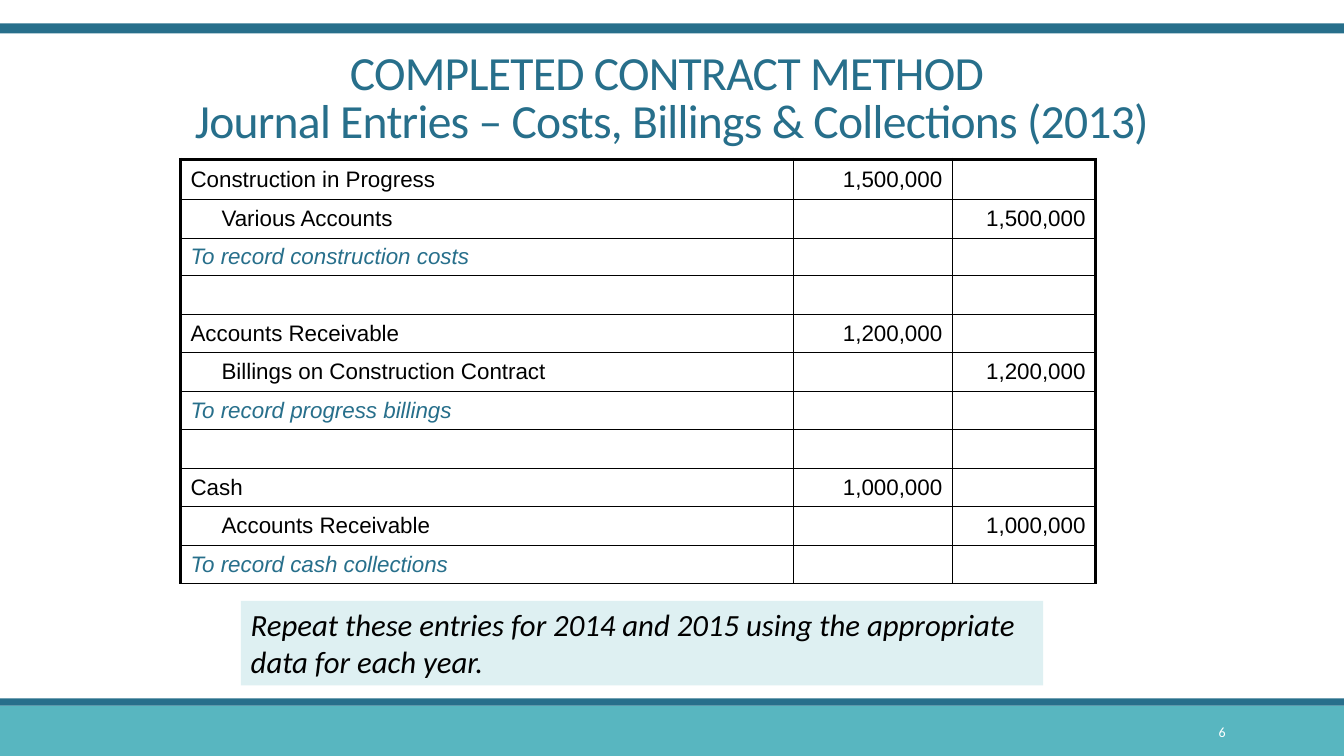
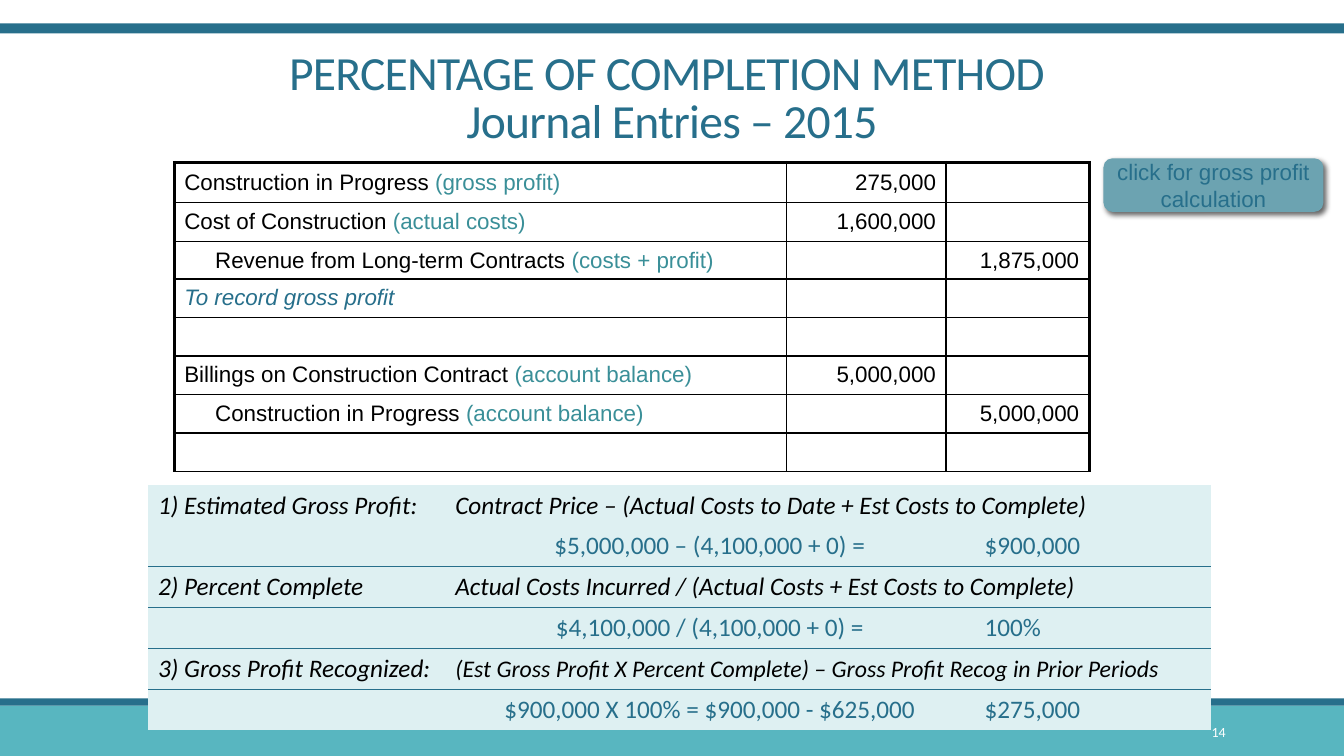
from lxml.etree import SubElement
from pptx import Presentation
from pptx.dml.color import RGBColor
from pptx.enum.shapes import MSO_SHAPE
from pptx.enum.text import MSO_ANCHOR, PP_ALIGN
from pptx.oxml import parse_xml
from pptx.oxml.ns import nsdecls, qn
from pptx.util import Cm, Pt

BLUE, TEAL, PALE = "276F8B", "58B6C0", "DEF0F2"
BLACK, WHITE, HINT, BUTTON = "000000", "FFFFFF", "3A8F98", "6CA3B1"
WIDE = 33.87
NO_STYLE = "{2D5ABB26-0587-4C30-8999-92F81FD0307C}"
rgb = RGBColor.from_string


def write(frame, text, size=18, color=BLACK, font="Calibri", italic=False,
          align=PP_ALIGN.LEFT, hint="", indent=0, space=None, track=0):
    """Fill a text frame, one paragraph a line; hint is a coloured tail."""
    frame.word_wrap = True
    for i, line in enumerate(text.split("\n")):
        para = frame.add_paragraph() if i else frame.paragraphs[0]
        para.alignment = align
        para.line_spacing = space
        if indent:
            para._p.get_or_add_pPr().set("marL", str(Cm(indent)))
        for part, tint in ((line, color), (hint, HINT)):
            if part:
                run = para.add_run()
                run.text = part
                run.font.size = Pt(size)
                run.font.name = font
                run.font.italic = italic
                run.font.color.rgb = rgb(tint)
                if track:
                    run._r.get_or_add_rPr().set("spc", str(track))


def edge(cell, color, **sides):
    """Draw cell borders; sides are L, R, T, B with widths in points."""
    props = cell._tc.get_or_add_tcPr()
    for side, width in sides.items():
        line = SubElement(props, qn("a:ln" + side), w=str(Pt(width)))
        fill = SubElement(line, qn("a:solidFill"))
        SubElement(fill, qn("a:srgbClr"), val=color)


# Shared bands: top, width of the shape, colour
bands = [(17.78, 1.27, TEAL), (17.6, 0.18, BLUE), (0.59, 0.25, BLUE)]

# Journal rows: account, hint, debit, credit
gap = ("", "", "", "")
pages = [
    dict(title="COMPLETED CONTRACT METHOD \n"
               "Journal Entries – Costs, Billings & Collections (2013)",
         number="6", left=4.55, top=4.01, rows=[
             ("Construction in Progress", "", "1,500,000", ""),
             ("Various Accounts", "", "", "1,500,000"),
             ("To record construction costs", "", "", ""),
             gap,
             ("Accounts Receivable", "", "1,200,000", ""),
             ("Billings on Construction Contract", "", "", "1,200,000"),
             ("To record progress billings", "", "", ""),
             gap,
             ("Cash", "", "1,000,000", ""),
             ("Accounts Receivable", "", "", "1,000,000"),
             ("To record cash collections", "", "", "")]),
    dict(title="PERCENTAGE OF COMPLETION METHOD \nJournal Entries – 2015",
         number="14", left=4.39, top=4.09, rows=[
             ("Construction in Progress ", "(gross profit)", "275,000", ""),
             ("Cost of Construction ", "(actual costs)", "1,600,000", ""),
             ("Revenue from Long-term Contracts ", "(costs + profit)", "",
              "1,875,000"),
             ("To record gross profit", "", "", ""),
             gap,
             ("Billings on Construction Contract ", "(account balance)",
              "5,000,000", ""),
             ("Construction in Progress ", "(account balance)", "",
              "5,000,000"),
             gap]),
]
cols = [15.44, 4.01, 3.61]

deck = Presentation()
deck.slide_width, deck.slide_height = Cm(WIDE), Cm(19.05)

for page in pages:
    slide = deck.slides.add_slide(deck.slide_layouts[6])
    shapes = slide.shapes

    # Bands
    for top, high, color in bands:
        band = shapes.add_shape(MSO_SHAPE.RECTANGLE, 0, Cm(top), Cm(WIDE),
                                Cm(high))
        band.shadow.inherit = False
        band.fill.solid()
        band.fill.fore_color.rgb = rgb(color)
        band.line.fill.background()

    # Title and page number
    title = shapes.add_textbox(0, Cm(1.17), Cm(WIDE), Cm(3.18))
    write(title.text_frame, page["title"], size=34, color=BLUE,
          align=PP_ALIGN.CENTER, space=0.85, track=-50)
    number = shapes.add_textbox(Cm(27.51), Cm(17.93), Cm(3.63), Cm(1.02))
    number.text_frame.vertical_anchor = MSO_ANCHOR.MIDDLE
    write(number.text_frame, page["number"], size=10, color=WHITE,
          align=PP_ALIGN.RIGHT)

    # Journal table
    rows = page["rows"]
    highs = [1.02, 0.98, 0.94] + [0.97] * (len(rows) - 3)
    table = shapes.add_table(len(rows), 3, Cm(page["left"]), Cm(page["top"]),
                             Cm(sum(cols)), Cm(sum(highs))).table
    for col, width in zip(table.columns, cols):
        col.width = Cm(width)
    for r, (name, hint, debit, credit) in enumerate(rows):
        table.rows[r].height = Cm(highs[r])
        memo = not (debit or credit)
        write(table.cell(r, 0).text_frame, name, size=16, font="Arial",
              color=BLUE if memo else BLACK, italic=memo, hint=hint,
              indent=0.78 if credit else 0)
        for c, sum_text in ((1, debit), (2, credit)):
            write(table.cell(r, c).text_frame, sum_text, size=16,
                  font="Arial", align=PP_ALIGN.RIGHT)
        for c in range(3):
            cell = table.cell(r, c)
            edge(cell, BLACK, L=1 if c else 2.25, R=2.25 if c == 2 else 1,
                 T=1 if r else 2.25, B=1)
            cell.fill.background()

first, second = deck.slides

# Note under the first journal
note = first.shapes.add_shape(MSO_SHAPE.RECTANGLE, Cm(6.07), Cm(15.14),
                              Cm(20.22), Cm(2.13))
note.shadow.inherit = False
note.fill.solid()
note.fill.fore_color.rgb = rgb(PALE)
note.line.fill.background()
note.text_frame.vertical_anchor = MSO_ANCHOR.TOP
write(note.text_frame, "Repeat these entries for 2014 and 2015 using the "
      "appropriate data for each year.", size=22, italic=True)

# Button beside the second journal
button = second.shapes.add_shape(MSO_SHAPE.ROUNDED_RECTANGLE, Cm(27.81),
                                 Cm(3.99), Cm(5.54), Cm(1.35))
button.fill.solid()
button.fill.fore_color.rgb = rgb(BUTTON)
button.line.fill.background()
button._element.spPr.append(parse_xml(
    f'<a:effectLst {nsdecls("a")}><a:outerShdw blurRad="{Pt(4)}" '
    f'dist="{Pt(3)}" dir="2700000"><a:srgbClr val="{BLACK}">'
    '<a:alpha val="60000"/></a:srgbClr></a:outerShdw></a:effectLst>'))
button.text_frame.vertical_anchor = MSO_ANCHOR.MIDDLE
write(button.text_frame, "click for gross profit calculation", size=16,
      color=BLUE, font="Arial", align=PP_ALIGN.CENTER)

# Steps of the gross profit sum: label, rule, size of rule, figures, result
steps = [
    ("1) Estimated Gross Profit:",
     "Contract Price – (Actual Costs to Date + Est Costs to Complete)", 18,
     "$5,000,000 – (4,100,000 + 0) =", "$900,000"),
    ("2) Percent Complete",
     "Actual Costs Incurred / (Actual Costs + Est Costs to Complete)", 18,
     "$4,100,000 / (4,100,000 + 0) =", "100%"),
    ("3) Gross Profit Recognized:",
     "(Est Gross Profit X Percent Complete) – Gross Profit Recog in Prior "
     "Periods", 17,
     "$900,000 X 100% = $900,000 - $625,000", "$275,000"),
]
cols = [7.49, 13.34, 5.97]
count = 2 * len(steps)
table = second.shapes.add_table(count, 3, Cm(3.73), Cm(12.22), Cm(sum(cols)),
                                Cm(1.03 * count)).table
for col, width in zip(table.columns, cols):
    col.width = Cm(width)
for row in table.rows:
    row.height = Cm(1.03)
for i, (label, rule, size, figures, result) in enumerate(steps):
    top, low = 2 * i, 2 * i + 1
    for c in range(3):
        if i:
            edge(table.cell(top, c), BLUE, T=1)
        if low < count - 1:
            edge(table.cell(low, c), BLUE, B=1)
    table.cell(top, 1).merge(table.cell(top, 2))
    write(table.cell(top, 0).text_frame, label, italic=True)
    write(table.cell(top, 1).text_frame, rule, size=size, italic=True)
    write(table.cell(low, 1).text_frame, figures, color=BLUE,
          align=PP_ALIGN.CENTER)
    write(table.cell(low, 2).text_frame, result, color=BLUE)
for cell in table.iter_cells():
    cell.fill.solid()
    cell.fill.fore_color.rgb = rgb(PALE)

# Plain style for every table
for slide in deck.slides:
    for shape in slide.shapes:
        if shape.has_table:
            table = shape.table
            table.first_row = table.horz_banding = False
            table._tbl.tblPr.find(qn("a:tableStyleId")).text = NO_STYLE
            for cell in table.iter_cells():
                cell.margin_top = cell.margin_bottom = 0
                cell.vertical_anchor = MSO_ANCHOR.MIDDLE

deck.save("out.pptx")
